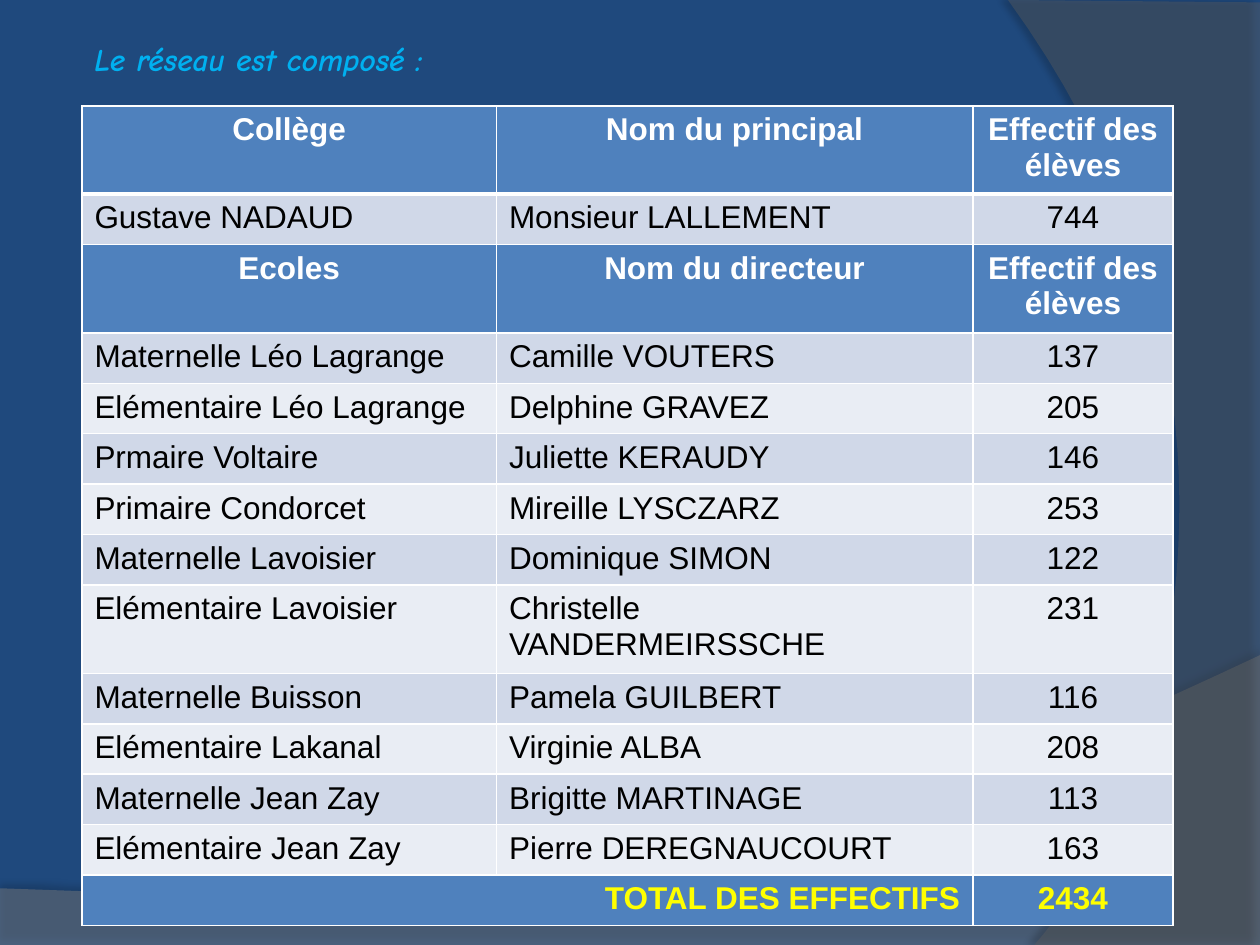
"""Builds the slide that lists the schools of the network and their pupil numbers."""
from lxml import etree
from pptx import Presentation
from pptx import util as u
from pptx.dml.color import RGBColor
from pptx.enum import text
from pptx.oxml import ns

COLORS = {
    "background": "1F497D", "title": "00B0F0", "header": "4F81BD",
    "dark band": "D0D8E8", "light band": "E9EDF4", "white": "FFFFFF",
    "black": "000000", "total": "FFFF00", "bottom wave": "7F7F7F",
    "right wave": "5E5E5E",
}
TITLE = "Le réseau est composé :"
COLLEGE_HEADER = ("Collège", "Nom du principal", "Effectif des élèves")
COLLEGE = ("Gustave NADAUD", "Monsieur LALLEMENT", "744")
SCHOOL_HEADER = ("Ecoles", "Nom du directeur", "Effectif des élèves")
SCHOOLS = [
    ("Maternelle Léo Lagrange", "Camille VOUTERS", "137"),
    ("Elémentaire Léo Lagrange", "Delphine GRAVEZ", "205"),
    ("Prmaire Voltaire", "Juliette KERAUDY", "146"),
    ("Primaire Condorcet", "Mireille LYSCZARZ", "253"),
    ("Maternelle Lavoisier", "Dominique SIMON", "122"),
    ("Elémentaire Lavoisier", "Christelle VANDERMEIRSSCHE", "231"),
    ("Maternelle Buisson", "Pamela GUILBERT", "116"),
    ("Elémentaire Lakanal", "Virginie ALBA", "208"),
    ("Maternelle Jean Zay", "Brigitte MARTINAGE", "113"),
    ("Elémentaire Jean Zay", "Pierre DEREGNAUCOURT", "163"),
]
TOTAL = ("TOTAL DES EFFECTIFS", "", "2434")
WAVES = [
    {"color": "bottom wave", "opacity": 45, "corners": [(0, 507.6), (0, 540), (720, 540)],
     "curve": [(720, 374.4), (402.5, 524.9), (281.5, 517.7), (0, 507.6)],
     "shadow": {"opacity": 35, "blur": 4, "distance": 3.5, "angle": 270}},
    {"color": "right wave", "opacity": 40, "corners": [(720, 1.4), (720, 540)],
     "curve": [(591.1, 540), (673.2, 445.7), (733, 216), (576, 0)],
     "shadow": {"opacity": 45, "blur": 4, "distance": 4, "angle": 180}},
]
CURVE_STEPS = 40
LEFT, TITLE_TOP, TABLE_TOP = 46.8, 19.4, 60.5
COLUMN_WIDTHS = (236.9, 272.2, 114.5)
ROW_HEIGHT, TALL_ROW_HEIGHT = 28.8, 50.4


def rgb(name):
    return RGBColor.from_string(COLORS[name])


def add_child(parent, tag, **attributes):
    child = etree.SubElement(parent, ns.qn(tag))
    for key, value in attributes.items():
        child.set(key, str(value))
    return child


def bezier_point(curve, t):
    weights = ((1 - t) ** 3, 3 * t * (1 - t) ** 2, 3 * t * t * (1 - t), t ** 3)
    return tuple(sum(w * point[axis] for w, point in zip(weights, curve)) for axis in (0, 1))


def add_wave(page, wave):
    points = wave["corners"] + [
        bezier_point(wave["curve"], step / CURVE_STEPS) for step in range(CURVE_STEPS + 1)]
    start, *others = [(u.Pt(x), u.Pt(y)) for x, y in points]
    builder = page.shapes.build_freeform(*start)
    builder.add_line_segments(others, close=True)
    shape = builder.convert_to_shape()
    shape.fill.solid()
    shape.fill.fore_color.rgb = rgb(wave["color"])
    shape.line.fill.background()
    shape.shadow.inherit = False
    properties = shape.element.spPr
    fill_color = properties.find(ns.qn("a:solidFill"))[0]
    add_child(fill_color, "a:alpha", val=wave["opacity"] * 1000)
    shadow = wave["shadow"]
    outer = add_child(
        properties.find(ns.qn("a:effectLst")), "a:outerShdw", blurRad=u.Pt(shadow["blur"]),
        dist=u.Pt(shadow["distance"]), dir=shadow["angle"] * 60000, rotWithShape=0)
    shadow_color = add_child(outer, "a:srgbClr", val=COLORS["black"])
    add_child(shadow_color, "a:alpha", val=shadow["opacity"] * 1000)


def set_font(paragraph, font_name, color, bold, italic=False):
    font = paragraph.font
    font.name, font.size, font.bold, font.italic = font_name, u.Pt(18), bold, italic
    font.color.rgb = rgb(color)


def add_title(page):
    box = page.shapes.add_textbox(u.Pt(LEFT), u.Pt(TITLE_TOP), u.Pt(607), u.Pt(51.1))
    box.text_frame.word_wrap = True
    para = box.text_frame.paragraphs[0]
    para.text = TITLE
    set_font(para, "Comic Neue", "title", True, True)


def style_cell(cell, words, fill, color, bold, align, widths):
    properties = cell._tc.get_or_add_tcPr()
    for side in "LRTB":
        line = add_child(properties, f"a:ln{side}", w=u.Pt(widths.get(side, 1)))
        add_child(add_child(line, "a:solidFill"), "a:srgbClr", val=COLORS["white"])
    cell.fill.solid()
    cell.fill.fore_color.rgb = rgb(fill)
    para = cell.text_frame.paragraphs[0]
    para.text = words
    para.alignment = align
    set_font(para, "Arial", color, bold)


def add_table(page):
    left, center, right = text.PP_ALIGN.LEFT, text.PP_ALIGN.CENTER, text.PP_ALIGN.RIGHT
    header = ("header", "white", True, (center,) * 3)
    bands = [(band, "black", False, (left, left, center)) for band in ("dark band", "light band")]
    rows = [(COLLEGE_HEADER, header), (COLLEGE, bands[0]), (SCHOOL_HEADER, header)]
    rows += [(school, bands[i % 2]) for i, school in enumerate(SCHOOLS)]
    rows.append((TOTAL, ("header", "total", True, (right, right, center))))
    tall_rows = {0, 2, 8}
    heights = [TALL_ROW_HEIGHT if i in tall_rows else ROW_HEIGHT for i in range(len(rows))]

    frame = page.shapes.add_table(
        len(rows), len(COLUMN_WIDTHS), u.Pt(LEFT), u.Pt(TABLE_TOP),
        u.Pt(sum(COLUMN_WIDTHS)), u.Pt(sum(heights)))
    table = frame.table
    for column, width in zip(table.columns, COLUMN_WIDTHS):
        column.width = u.Pt(width)
    heavy_sides = {0: {"B": 3}, 1: {"T": 3}}
    for i, (words, (fill, color, bold, aligns)) in enumerate(rows):
        table.rows[i].height = u.Pt(heights[i])
        for j, (word, align) in enumerate(zip(words, aligns)):
            style_cell(table.cell(i, j), word, fill, color, bold, align, heavy_sides.get(i, {}))
    last = len(rows) - 1
    table.cell(last, 0).merge(table.cell(last, 1))


def main():
    deck = Presentation()
    deck.slide_width, deck.slide_height = u.Pt(720), u.Pt(540)
    page = deck.slides.add_slide(deck.slide_layouts[6])
    page.background.fill.solid()
    page.background.fill.fore_color.rgb = rgb("background")
    for wave in WAVES:
        add_wave(page, wave)
    add_title(page)
    add_table(page)
    deck.save("out.pptx")


if __name__ == "__main__":
    main()
